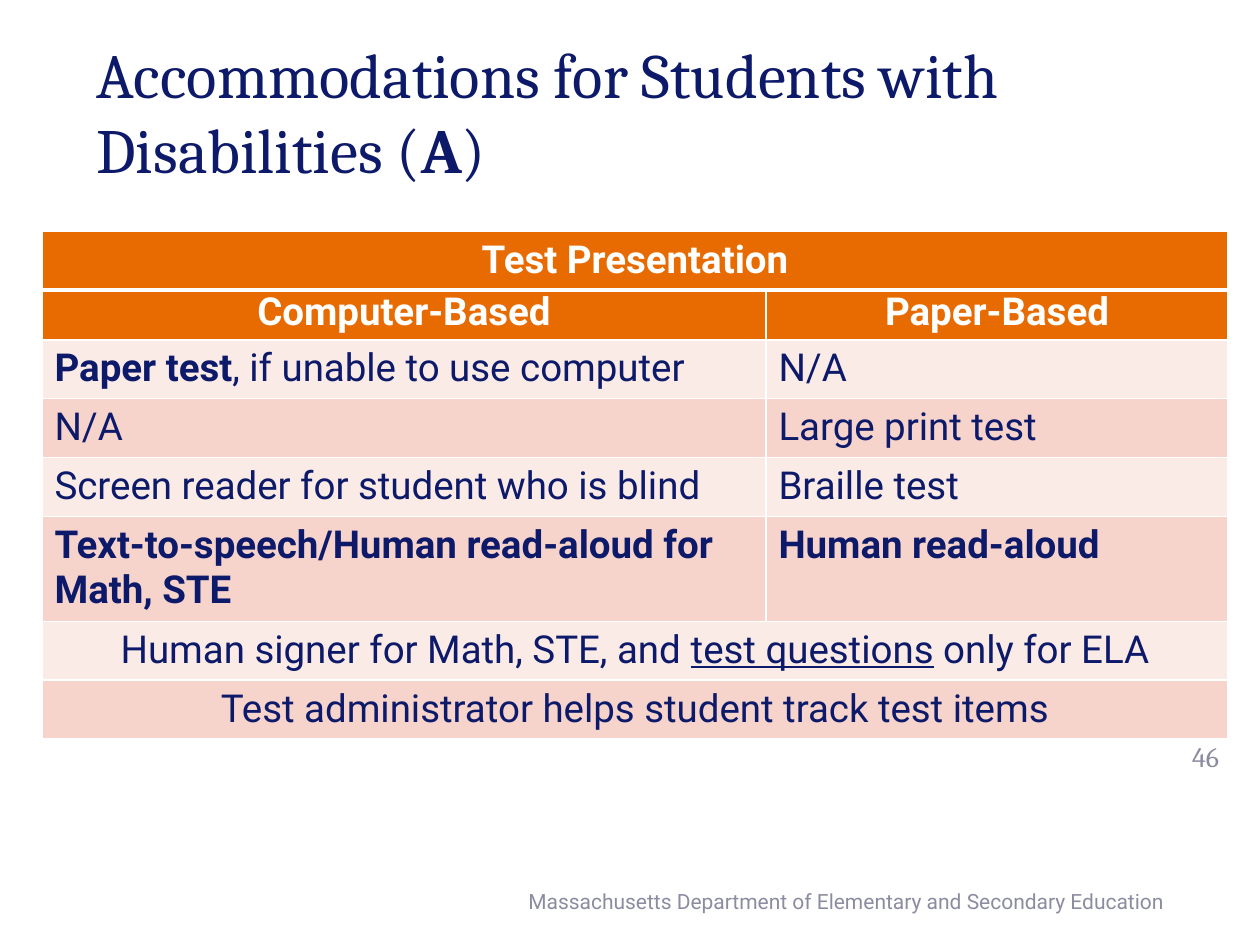
from dataclasses import dataclass

from lxml.etree import SubElement
from pptx import Presentation
from pptx.dml.color import RGBColor
from pptx.enum.text import MSO_ANCHOR as Anchor, MSO_AUTO_SIZE as Fit, PP_ALIGN as Align
from pptx.oxml.ns import qn
from pptx.util import Emu, Pt

NAVY, GREY, WHITE = "0D1969", "8C8CA1", "FFFFFF"
ORANGE, PALE, PINK = "E86B01", "FBEBE7", "F6D4CC"
SERIF, SANS = "Cambria", "Roboto"


@dataclass(frozen=True)
class Bit:
    text: str
    bold: bool = False
    under: bool = False


@dataclass(frozen=True)
class Style:
    size: int
    face: str
    color: str
    align: Align = Align.LEFT
    anchor: Anchor = Anchor.MIDDLE


@dataclass(frozen=True)
class Row:
    """A table row; one cell alone spans both columns."""
    height: int
    cells: tuple[tuple[Bit, ...], ...]


ROWS = (
    Row(57, ((Bit("Test Presentation", True),),)),
    Row(50, ((Bit("Computer-Based", True),), (Bit("Paper-Based", True),))),
    Row(58, ((Bit("Paper test", True), Bit(", if unable to use computer")), (Bit("N/A"),))),
    Row(58, ((Bit("N/A"),), (Bit("Large print test"),))),
    Row(58, ((Bit("Screen reader for student who is blind"),), (Bit("Braille test"),))),
    Row(102, ((Bit("Text-to-speech/Human read-aloud for Math, STE", True),),
              (Bit("Human read-aloud", True),))),
    Row(58, ((Bit("Human signer for Math, STE, and "), Bit("test questions", under=True),
              Bit(" only for ELA")),)),
    Row(58, ((Bit("Test administrator helps student track test items"),),)),
)
COLS = (724, 462)
HEADS = 2


def px(count: int) -> Emu:
    return Emu(round(count * 914400 / 126))


def rgb(code: str) -> RGBColor:
    return RGBColor.from_string(code)


def write(frame, bits: tuple[Bit, ...], style: Style) -> None:
    frame.word_wrap = True
    frame.vertical_anchor = style.anchor
    para = frame.paragraphs[0]
    para.alignment = style.align
    for bit in bits:
        run = para.add_run()
        run.text = bit.text
        font = run.font
        font.size, font.name = Pt(style.size), style.face
        font.color.rgb = rgb(style.color)
        font.bold, font.underline = bit.bold, bit.under


def place(shape, left: int, top: int, width: int, height: int) -> None:
    shape.left, shape.top = px(left), px(top)
    shape.width, shape.height = px(width), px(height)


def label(slide, box: tuple[int, int, int, int], text: str, style: Style) -> None:
    shape = slide.shapes.add_textbox(*map(px, box))
    write(shape.text_frame, (Bit(text),), style)


def border(cell, top: int, bottom: int) -> None:
    """Draw white cell edges; they must come before the fill in tcPr."""
    props = cell._tc.get_or_add_tcPr()
    edges = (("L", 1), ("R", 1), ("T", top), ("B", bottom))
    for spot, (side, width) in enumerate(edges):
        line = SubElement(props, qn(f"a:ln{side}"), w=str(Pt(width)))
        fill = SubElement(line, qn("a:solidFill"))
        SubElement(fill, qn("a:srgbClr"), val=WHITE)
        props.insert(spot, line)


def paint(cell, index: int) -> None:
    cell.fill.solid()
    body = PINK if index % 2 else PALE
    cell.fill.fore_color.rgb = rgb(ORANGE if index < HEADS else body)
    border(cell, 3 if index == 1 else 1, 3 if index == 0 else 1)


def fill_row(table, index: int, row: Row) -> None:
    table.rows[index].height = px(row.height)
    for col in range(len(COLS)):
        paint(table.cell(index, col), index)
    whole = len(row.cells) == 1
    if whole:
        table.cell(index, 0).merge(table.cell(index, len(COLS) - 1))
    head = index < HEADS
    style = Style(22, SANS, WHITE if head else NAVY,
                  Align.CENTER if head or whole else Align.LEFT,
                  Anchor.MIDDLE if index == 1 else Anchor.TOP)
    for col, bits in enumerate(row.cells):
        cell = table.cell(index, col)
        if index == 1:
            cell.margin_left = cell.margin_right = px(8)
            cell.margin_top = cell.margin_bottom = 0
        write(cell.text_frame, bits, style)


def add_grid(slide) -> None:
    high = sum(row.height for row in ROWS)
    frame = slide.shapes.add_table(len(ROWS), len(COLS), px(42), px(231),
                                   px(sum(COLS)), px(high))
    table = frame.table
    for col, width in zip(table.columns, COLS):
        col.width = px(width)
    for index, row in enumerate(ROWS):
        fill_row(table, index, row)


def main() -> None:
    deck = Presentation()
    deck.slide_width, deck.slide_height = px(1260), px(945)
    slide = deck.slides.add_slide(deck.slide_layouts[5])
    title = slide.shapes.title
    place(title, 84, 32, 1092, 158)
    title.text_frame.auto_size = Fit.NONE
    write(title.text_frame,
          (Bit("Accommodations for Students with Disabilities ("), Bit("A", True), Bit(")")),
          Style(36, SERIF, NAVY))
    label(slide, (431, 876, 746, 50),
          "Massachusetts Department of Elementary and Secondary Education",
          Style(12, SANS, GREY, Align.RIGHT))
    label(slide, (1169, 725, 73, 63), "46", Style(16, SERIF, GREY, Align.CENTER))
    add_grid(slide)
    deck.save("out.pptx")


if __name__ == "__main__":
    main()
